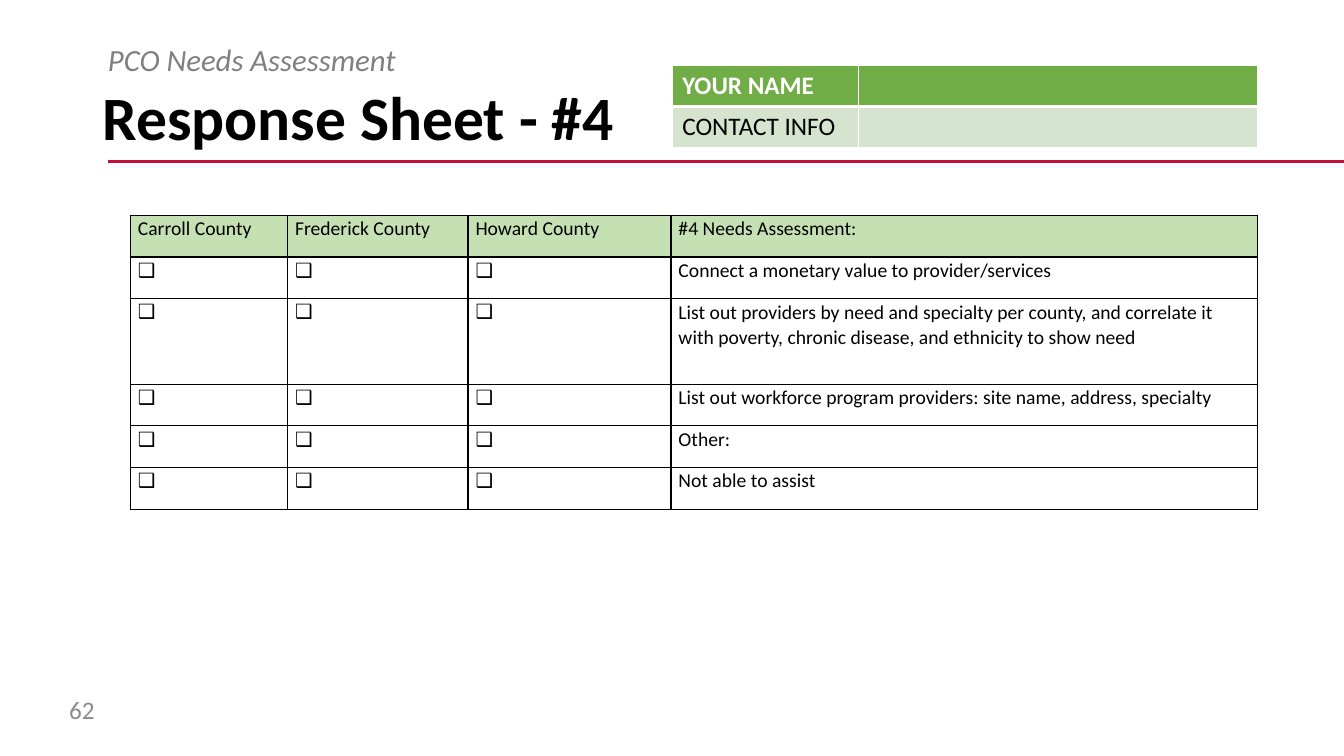
from dataclasses import dataclass

from lxml import etree
from pptx import Presentation
from pptx.dml.color import RGBColor
from pptx.enum import shapes, text
from pptx.oxml import ns
from pptx.util import Pt


@dataclass(frozen=True)
class Theme:
    font: str = "Calibri"
    black: str = "000000"
    white: str = "FFFFFF"
    grey: str = "808080"
    number_grey: str = "8C8C8C"
    red: str = "C40E3E"
    green: str = "70AD47"
    pale_green: str = "D5E3CF"
    header_green: str = "C5E0B3"
    title: int = 44
    subtitle: int = 22
    label: int = 18
    body: int = 14


THEME = Theme()
CHECKBOX = "❑"
COUNTIES = ["Carroll County", "Frederick County", "Howard County"]
NEEDS = [
    "Connect a monetary value to provider/services",
    "List out providers by need and specialty per county, and correlate it "
    "with poverty, chronic disease, and ethnicity to show need",
    "List out workforce program providers: site name, address, specialty",
    "Other:",
    "Not able to assist",
]


def write(tf, words, size, color, bold=False, italic=False, spacing=1.0):
    p = tf.paragraphs[0]
    p.alignment = text.PP_ALIGN.LEFT
    p.line_spacing = spacing
    p.space_before = Pt(0)
    r = p.add_run()
    r.text = words
    r.font.name = THEME.font
    r.font.size = Pt(size)
    r.font.bold = bold
    r.font.italic = italic
    r.font.color.rgb = RGBColor.from_string(color)


def add_title(s, words, left, top, width, height):
    sp = s.shapes.title
    sp.left, sp.top, sp.width, sp.height = map(Pt, (left, top, width, height))
    tf = sp.text_frame
    tf.vertical_anchor = text.MSO_ANCHOR.MIDDLE
    tf.auto_size = text.MSO_AUTO_SIZE.NONE
    write(tf, words, THEME.title, THEME.black, bold=True, spacing=0.9)


def add_text(s, words, box, size, color, anchor, **style):
    tf = s.shapes.add_textbox(*map(Pt, box)).text_frame
    tf.word_wrap = True
    tf.vertical_anchor = anchor
    write(tf, words, size, color, **style)


def add_rule(s, left, right, y):
    sp = s.shapes.add_connector(
        shapes.MSO_CONNECTOR.STRAIGHT, Pt(left), Pt(y), Pt(right), Pt(y))
    sp.line.color.rgb = RGBColor.from_string(THEME.red)
    sp.line.width = Pt(2.25)
    etree.SubElement(sp.element.spPr, ns.qn("a:effectLst"))


def set_borders(cell, color, bottom=1):
    tcPr = cell._tc.get_or_add_tcPr()
    widths = {"lnL": 1, "lnR": 1, "lnT": 1, "lnB": bottom}
    for i, (side, width) in enumerate(widths.items()):
        ln = etree.Element(ns.qn(f"a:{side}"), w=str(Pt(width)))
        fill = etree.SubElement(ln, ns.qn("a:solidFill"))
        etree.SubElement(fill, ns.qn("a:srgbClr"), val=color)
        tcPr.insert(i, ln)


def add_table(s, left, top, widths, heights):
    table = s.shapes.add_table(
        len(heights), len(widths), Pt(left), Pt(top),
        Pt(sum(widths)), Pt(sum(heights))).table
    table.horz_banding = False
    for column, width in zip(table.columns, widths):
        column.width = Pt(width)
    for row, height in zip(table.rows, heights):
        row.height = Pt(height)
    return table


def fill_cell(cell, color):
    cell.fill.solid()
    cell.fill.fore_color.rgb = RGBColor.from_string(color)


def add_checkbox(tf):
    pPr = tf.paragraphs[0]._p.get_or_add_pPr()
    pPr.set("marL", str(Pt(18)))
    pPr.set("indent", str(Pt(-18)))
    etree.SubElement(pPr, ns.qn("a:buFont"), typeface=THEME.font)
    etree.SubElement(pPr, ns.qn("a:buChar"), char=CHECKBOX)
    write(tf, " ", THEME.body, THEME.black, spacing=1.07)


def add_contact_table(s):
    table = add_table(s, 480.2, 46.9, [133, 285], [29.2, 29.2])
    rows = [
        ("YOUR NAME", THEME.green, THEME.white, True, 3),
        ("CONTACT INFO", THEME.pale_green, THEME.black, False, 1),
    ]
    for row, (label, fill, color, bold, bottom) in zip(table.rows, rows):
        for cell in row.cells:
            fill_cell(cell, fill)
            set_borders(cell, THEME.white, bottom)
        write(row.cells[0].text_frame, label, THEME.label, color, bold=bold)


def add_response_table(s):
    heights = [29.8, 29.8, 61, 29.8, 29.8, 29.8]
    table = add_table(s, 93.1, 153.8, [112.3, 128.9, 145, 418.8], heights)
    rows = [COUNTIES + ["#4 Needs Assessment:"]]
    rows += [[CHECKBOX] * len(COUNTIES) + [need] for need in NEEDS]
    for i, words in enumerate(rows):
        for cell, value in zip(table.rows[i].cells, words):
            cell.margin_left = cell.margin_right = Pt(5.4)
            cell.margin_top = cell.margin_bottom = Pt(0)
            fill_cell(cell, THEME.white if i else THEME.header_green)
            set_borders(cell, THEME.black)
            if value == CHECKBOX:
                add_checkbox(cell.text_frame)
            else:
                write(cell.text_frame, value, THEME.body, THEME.black,
                      spacing=1.07)


def main():
    prs = Presentation()
    prs.slide_width, prs.slide_height = Pt(960), Pt(540)
    s = prs.slides.add_slide(prs.slide_layouts[5])
    add_rule(s, 77.5, 960, 115.6)
    add_title(s, "Response Sheet - #4", 66, 46.8, 828, 78.3)
    add_text(s, "62", (42.3, 492.5, 42.5, 28.8), THEME.label,
             THEME.number_grey, text.MSO_ANCHOR.MIDDLE)
    add_text(s, "PCO Needs Assessment", (70, 28.8, 824.4, 27.4), THEME.subtitle,
             THEME.grey, text.MSO_ANCHOR.TOP, italic=True, spacing=0.9)
    add_contact_table(s)
    add_response_table(s)
    prs.save("out.pptx")


if __name__ == "__main__":
    main()
